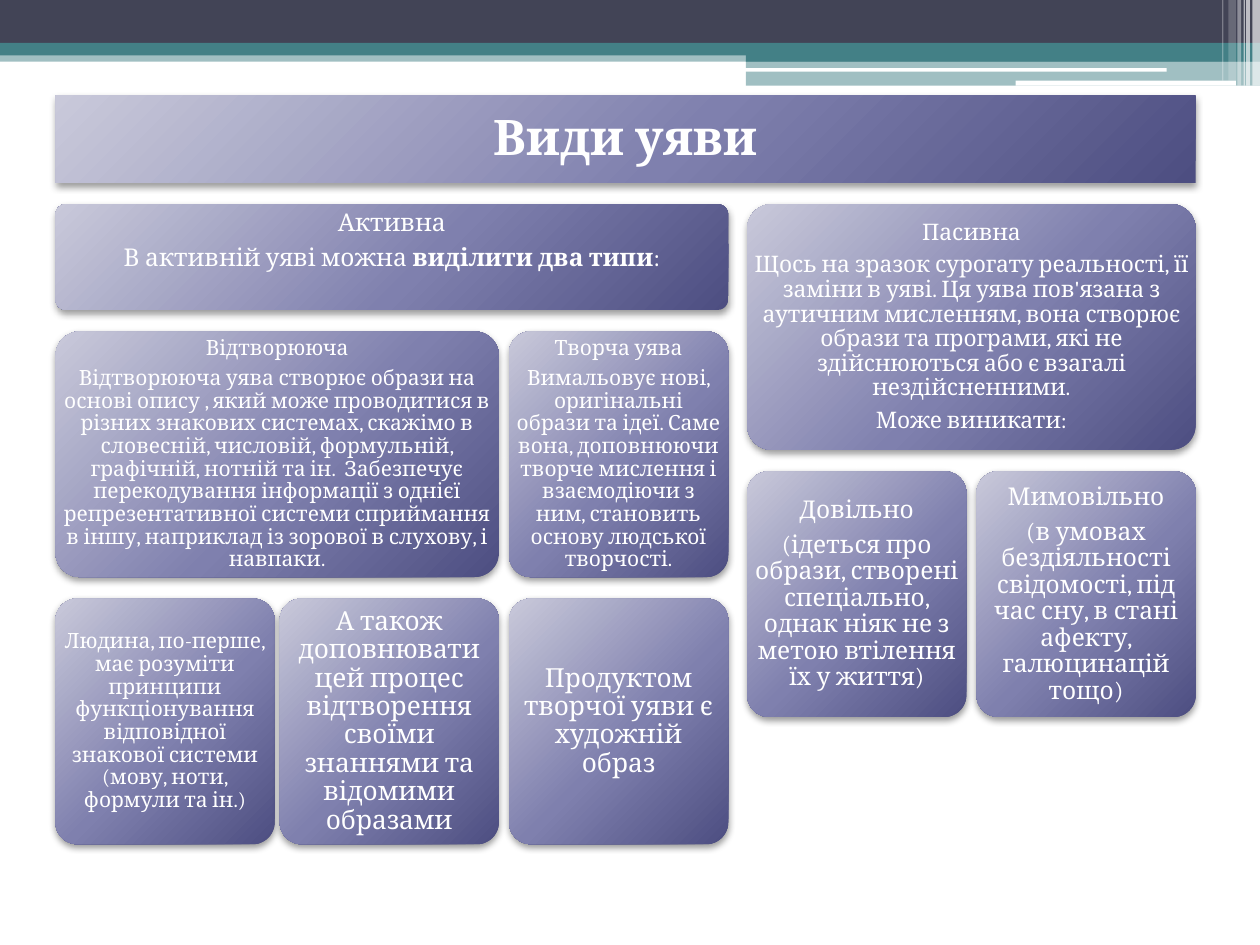
import pptx
import pptx.util
import pptx.oxml
import pptx.oxml.ns
import pptx.dml.color
import pptx.enum.shapes
import pptx.enum.text

COLORS = {"dark": "424456", "teal": "438086", "white": "FFFFFF",
          "light": "C9C9DA", "violet": "7F80AE", "deep": "4D4E81"}
SLIDE_W, SLIDE_H = 10, 7.5
LEFT, TOP = 0.44, 0.76
LEAF_W, TALL, ROW_GAP = 1.74, 1.95, 0.17
CORNER = 0.1

BANDS = [
    (0, 0.4, 10, 0.09, "teal", 50),
    (0, 0, 10, 0.34, "dark", 100),
    (0, 0.34, 10, 0.1, "teal", 100),
    (5.92, 0.39, 4.08, 0.1, "teal", 100),
    (5.92, 0.48, 4.08, 0.2, "teal", 50),
    (5.91, 0.54, 3.35, 0.03, "white", 100),
    (8.06, 0.64, 1.75, 0.04, "white", 100),
    (9.94, 0, 0.06, 0.68, "white", 65),
    (9.89, 0, 0.03, 0.68, "white", 65),
    (9.87, 0, 0.01, 0.68, "white", 60),
    (9.82, 0, 0.03, 0.68, "white", 40),
    (9.75, 0, 0.06, 0.64, "white", 20),
    (9.7, 0, 0.01, 0.64, "white", 30),
]


def node(size, paragraphs, height=TALL, gap=0, children=(), bottom=0):
    return {"size": size, "paragraphs": paragraphs, "height": height,
            "gap": gap, "children": children, "bottom": bottom}


REPRODUCTIVE = node(12, [
    ["Відтворююча"],
    ["Відтворююча уява створює образи на основі опису , який може проводитися в різних "
     "знакових системах, скажімо в словесній, числовій, формульній, графічній, нотній та ін.  "
     "Забезпечує перекодування інформації з однієї репрезентативної системи сприймання в іншу, "
     "наприклад із зорової в слухову, і навпаки."],
], gap=0.04, children=[
    node(12, [["Людина, по-перше, має розуміти принципи функціонування відповідної "
               "знакової системи (мову, ноти, формули та ін.)"]]),
    node(15, [["А також доповнювати цей процес відтворення своїми знаннями та "
               "відомими образами"]]),
])
CREATIVE = node(12, [
    ["Творча уява"],
    ["Вимальовує нові, оригінальні образи та ідеї. Саме вона, доповнюючи творче мислення і "
     "взаємодіючи з ним, становить основу людської творчості."],
], children=[node(15, [["Продуктом творчої уяви є художній образ"]])])
ACTIVE = node(14, [
    ["Активна"],
    ["В активній уяві можна ", "виділити два типи", ":"],
], height=0.84, gap=0.08, children=[REPRODUCTIVE, CREATIVE], bottom=0.25)
PASSIVE = node(13, [
    ["Пасивна"],
    ["Щось на зразок сурогату реальності, її заміни в уяві. Ця уява пов'язана з аутичним "
     "мисленням, вона створює образи та програми, які не здійснюються або є взагалі "
     "нездійсненними."],
    ["Може виникати:"],
], gap=0.08, children=[
    node(14, [["Довільно"],
              ["(ідеться про образи, створені спеціально, однак ніяк не з метою втілення "
               "їх у життя)"]]),
    node(14, [["Мимовільно"],
              ["(в умовах бездіяльності свідомості, під час сну, в стані афекту, "
               "галюцинацій тощо)"]]),
])
KINDS = node(28, [["Види уяви"]], height=0.69, gap=0.15, children=[ACTIVE, PASSIVE])

NS = pptx.oxml.ns.nsdecls("a")
GEOMETRY = (f'<a:prstGeom {NS} prst="roundRect"><a:avLst>'
            f'<a:gd name="adj" fmla="val {int(CORNER * 100000)}"/></a:avLst></a:prstGeom>')
STOPS = "".join(f'<a:gs pos="{share * 1000}"><a:srgbClr val="{COLORS[name]}"/></a:gs>'
                for share, name in [(0, "light"), (55, "violet"), (100, "deep")])
GRADIENT = (f'<a:gradFill {NS} rotWithShape="1"><a:gsLst>{STOPS}</a:gsLst><a:path path="circle">'
            '<a:fillToRect l="-40000" t="-90000" r="140000" b="190000"/></a:path></a:gradFill>')
NO_LINE = f'<a:ln {NS}><a:noFill/></a:ln>'
SHADOW = (f'<a:effectLst {NS}><a:outerShdw blurRad="50800" dist="25400" dir="5400000" '
          'rotWithShape="0"><a:srgbClr val="000000"><a:alpha val="40000"/></a:srgbClr>'
          '</a:outerShdw></a:effectLst>')


def rgb(name):
    return pptx.dml.color.RGBColor.from_string(COLORS[name])


def add_band(slide, x, y, w, h, color, opacity):
    band = slide.shapes.add_shape(pptx.enum.shapes.MSO_SHAPE.RECTANGLE,
                                  *map(pptx.util.Inches, (x, y, w, h)))
    band.shadow.inherit = False
    band.line.fill.background()
    band.fill.solid()
    band.fill.fore_color.rgb = rgb(color)
    if opacity < 100:
        tone = band._element.spPr.find(".//" + pptx.oxml.ns.qn("a:srgbClr"))
        tone.append(pptx.oxml.parse_xml(f'<a:alpha {NS} val="{opacity * 1000}"/>'))


def style_card(card, x, y, w, h):
    card.left, card.top, card.width, card.height = map(pptx.util.Inches, (x, y, w, h))
    properties = card._element.spPr
    for old in properties.findall(pptx.oxml.ns.qn("a:prstGeom")):
        properties.remove(old)
    for part in (GEOMETRY, GRADIENT, NO_LINE, SHADOW):
        properties.append(pptx.oxml.parse_xml(part))


def write(card, topic):
    frame = card.text_frame
    frame.word_wrap = True
    frame.auto_size = pptx.enum.text.MSO_AUTO_SIZE.NONE
    frame.vertical_anchor = pptx.enum.text.MSO_ANCHOR.MIDDLE
    frame.margin_left = frame.margin_right = frame.margin_top = 0
    frame.margin_bottom = pptx.util.Inches(topic["bottom"])
    for index, runs in enumerate(topic["paragraphs"]):
        paragraph = frame.add_paragraph() if index else frame.paragraphs[0]
        paragraph.alignment = pptx.enum.text.PP_ALIGN.CENTER
        paragraph.line_spacing = 0.9
        paragraph.space_after = pptx.util.Pt(round(topic["size"] * 0.35, 1))
        paragraph.font.name = "Cambria"
        paragraph.font.size = pptx.util.Pt(topic["size"])
        paragraph.font.color.rgb = rgb("white")
        paragraph.font.bold = topic is KINDS
        for position, text in enumerate(runs):
            run = paragraph.add_run()
            run.text = text
            if position == 1:
                run.font.bold = True


def width(topic):
    children = topic["children"]
    if not children:
        return LEAF_W
    return sum(map(width, children)) + topic["gap"] * (len(children) - 1)


def place(slide, topic, x, y):
    if topic is KINDS:
        card = slide.shapes.title
    else:
        card = slide.shapes.add_shape(pptx.enum.shapes.MSO_SHAPE.ROUNDED_RECTANGLE, 0, 0, 0, 0)
    style_card(card, x, y, width(topic), topic["height"])
    write(card, topic)
    for child in topic["children"]:
        place(slide, child, x, y + topic["height"] + ROW_GAP)
        x += width(child) + topic["gap"]


def main():
    deck = pptx.Presentation()
    deck.slide_width = pptx.util.Inches(SLIDE_W)
    deck.slide_height = pptx.util.Inches(SLIDE_H)
    slide = deck.slides.add_slide(deck.slide_layouts[5])
    for band in BANDS:
        add_band(slide, *band)
    place(slide, KINDS, LEFT, TOP)
    deck.save("out.pptx")


if __name__ == "__main__":
    main()
